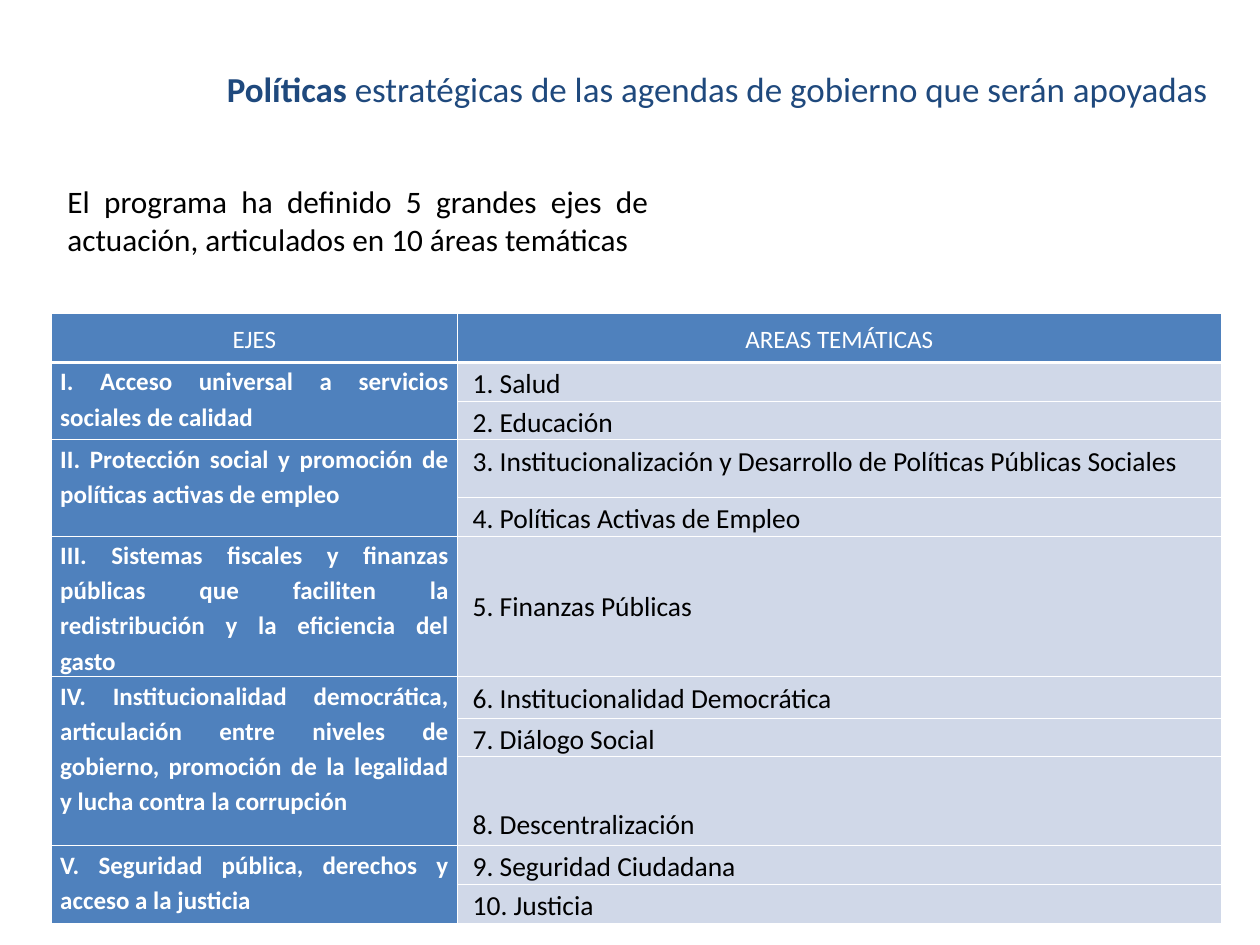
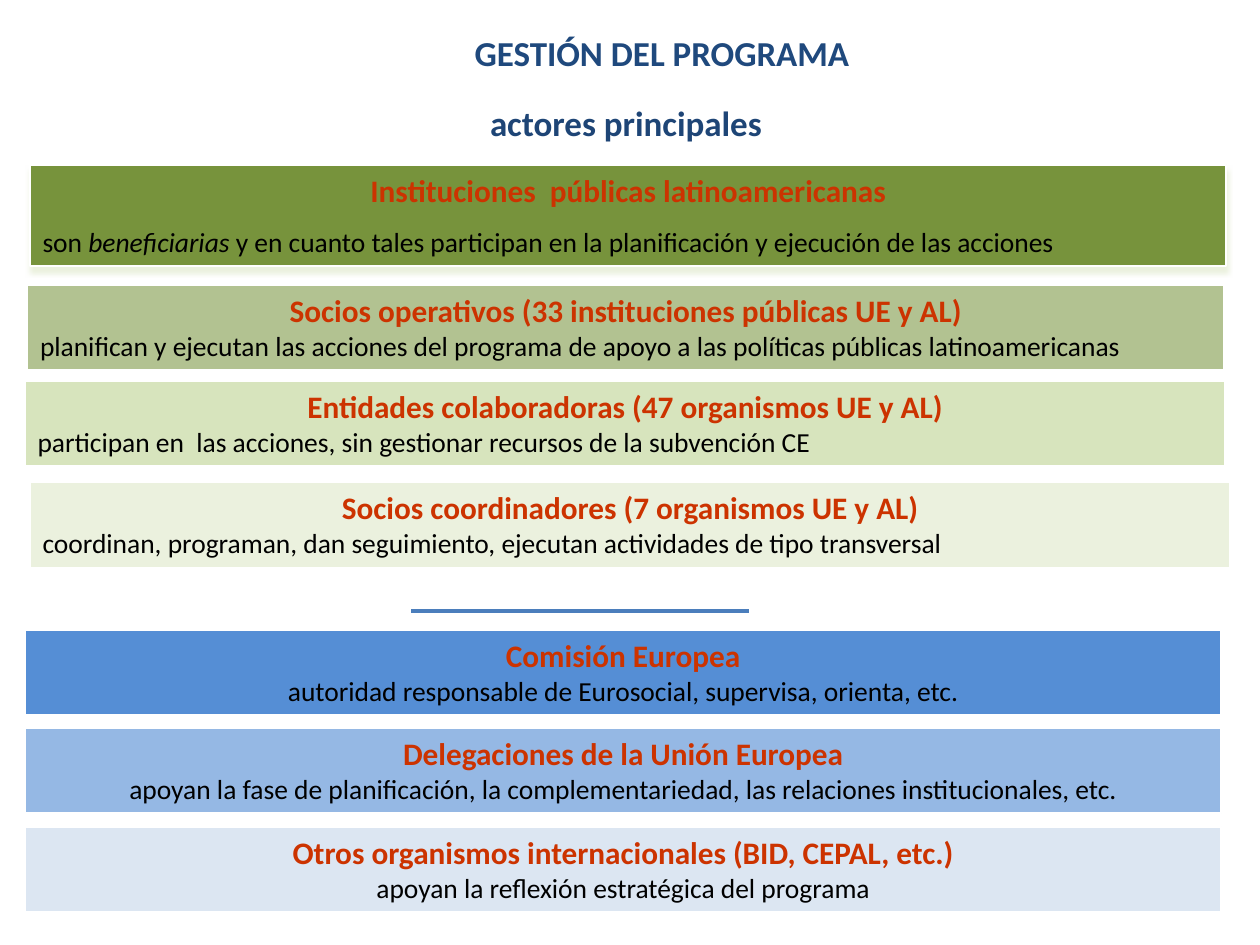
"""Builds two slides on the programme's policy areas and its main actors."""
from dataclasses import dataclass

from lxml.etree import SubElement
from pptx import Presentation
from pptx.dml.color import RGBColor
from pptx.enum.shapes import MSO_CONNECTOR, MSO_SHAPE
from pptx.enum.text import MSO_ANCHOR as Anchor, MSO_AUTO_SIZE as AutoSize, PP_ALIGN as Align
from pptx.oxml.ns import qn
from pptx.util import Pt

FONT = "Calibri"
COLORS = {
    "title": "1F497D", "subtitle": "1E4576", "heading": "CC3300", "black": "000000",
    "white": "FFFFFF", "axis": "4F81BD", "area": "D0D8E8", "divider": "4B7EBC",
    "olive": "77933C", "light_olive": "D7E4BD", "pale_olive": "EBF1DE",
    "blue": "558ED5", "pale_blue": "DCE6F2",
}
COLUMN_WIDTHS = (325, 611)
TITLE_SIZE, HEADING_SIZE, AXIS_SIZE, AREA_SIZE = 28, 25, 20, 22
ROW_GAP = 13


@dataclass(frozen=True)
class Frame:
    left: float
    top: float
    width: float
    height: float

    def lengths(self) -> tuple:
        return Pt(self.left), Pt(self.top), Pt(self.width), Pt(self.height)


@dataclass(frozen=True)
class Span:
    text: str
    bold: bool | None = None
    italic: bool | None = None


@dataclass(frozen=True)
class Area:
    text: str
    height: float
    anchor: Anchor = Anchor.TOP
    bottom: float = 0


@dataclass(frozen=True)
class Axis:
    text: str
    areas: tuple[Area, ...]


@dataclass(frozen=True)
class Actor:
    frame: Frame
    color: str
    heading: str
    role: tuple[Span, ...]
    align: Align = Align.LEFT
    opacity: int = 100
    role_gap: float = 0
    shadow: str = ""


AXES = (
    Axis("I. Acceso universal a servicios sociales de calidad",
         (Area("1. Salud", 31), Area("2. Educación", 31))),
    Axis("II. Protección social y promoción de políticas activas de empleo",
         (Area("3. Institucionalización y Desarrollo de Políticas Públicas Sociales", 46),
          Area("4. Políticas Activas de Empleo", 31))),
    Axis("III. Sistemas fiscales y finanzas públicas que faciliten la redistribución "
         "y la eficiencia del gasto",
         (Area("5. Finanzas Públicas", 110, Anchor.MIDDLE, 3),)),
    Axis("IV. Institucionalidad democrática, articulación entre niveles de gobierno, "
         "promoción de la legalidad y lucha contra la corrupción",
         (Area("6. Institucionalidad Democrática", 33), Area("7. Diálogo Social", 31),
          Area("8. Descentralización", 71, Anchor.BOTTOM, 3))),
    Axis("V. Seguridad pública, derechos y acceso a la justicia",
         (Area("9. Seguridad Ciudadana", 31), Area("10. Justicia", 31))),
)

ACTORS = (
    Actor(Frame(24, 132, 957, 81), "olive", "Instituciones  públicas latinoamericanas",
          (Span("son "), Span("beneficiarias", italic=True),
           Span(" y en cuanto tales participan en la planificación y ejecución de las acciones")),
          role_gap=ROW_GAP, shadow="pale_olive"),
    Actor(Frame(22, 228, 957, 68), "olive",
          "Socios operativos (33 instituciones públicas UE y AL)",
          (Span("planifican y ejecutan las acciones del programa de apoyo a las políticas "
                "públicas latinoamericanas"),), opacity=56),
    Actor(Frame(20, 305, 960, 68), "light_olive",
          "Entidades colaboradoras (47 organismos UE y AL)",
          (Span("participan en  las acciones, sin gestionar recursos de la subvención CE"),)),
    Actor(Frame(24, 386, 960, 68), "pale_olive",
          "Socios coordinadores (7 organismos UE y AL)",
          (Span("coordinan, programan, dan seguimiento, ejecutan actividades de tipo "
                "transversal"),)),
    Actor(Frame(20, 504, 957, 68), "blue", "Comisión Europea",
          (Span("autoridad responsable de Eurosocial, supervisa, orienta, etc."),),
          Align.CENTER),
    Actor(Frame(20, 582.5, 957, 68), "blue", "Delegaciones de la Unión Europea",
          (Span("apoyan la fase de planificación, la complementariedad, las relaciones "
                "institucionales, etc."),), Align.CENTER, opacity=62),
    Actor(Frame(20, 661.5, 957, 68), "pale_blue",
          "Otros organismos internacionales (BID, CEPAL, etc.)",
          (Span("apoyan la reflexión estratégica del programa"),), Align.CENTER),
)


def rgb(name: str) -> RGBColor:
    return RGBColor.from_string(COLORS[name])


def write(para, spans: tuple[Span, ...], size: float, color: str,
          align: Align = Align.LEFT, bold: bool = False) -> None:
    para.alignment = align
    font = para.font
    font.name, font.size, font.bold = FONT, Pt(size), bold
    font.color.rgb = rgb(color)
    for span in spans:
        run = para.add_run()
        run.text = span.text
        if span.bold is not None:
            run.font.bold = span.bold
        if span.italic is not None:
            run.font.italic = span.italic


def prepare(box, wrap: bool = True):
    text = box.text_frame
    text.word_wrap, text.auto_size = wrap, AutoSize.NONE
    text.vertical_anchor = Anchor.TOP
    text.margin_left = text.margin_right = Pt(10)
    text.margin_top = text.margin_bottom = Pt(5)
    return text


def add_page(deck, frame: Frame, spans: tuple[Span, ...]):
    page = deck.slides.add_slide(deck.slide_layouts[5])
    title = page.shapes.title
    title.left, title.top, title.width, title.height = frame.lengths()
    write(prepare(title).paragraphs[0], spans, TITLE_SIZE, "title", Align.CENTER)
    return page


def add_label(page, frame: Frame, text: str, size: float, color: str,
              align: Align, bold: bool = False, wrap: bool = True) -> None:
    box = page.shapes.add_textbox(*frame.lengths())
    write(prepare(box, wrap).paragraphs[0], (Span(text),), size, color, align, bold)


def add_borders(cell, bottom: float) -> None:
    properties = cell._tc.get_or_add_tcPr()
    for side, width in (("L", 1), ("R", 1), ("T", 1), ("B", bottom)):
        line = SubElement(properties, qn(f"a:ln{side}"), w=str(Pt(width)))
        fill = SubElement(line, qn("a:solidFill"))
        SubElement(fill, qn("a:srgbClr"), val=COLORS["white"])


def fill_cell(cell, color: str, bottom: float = 1) -> None:
    add_borders(cell, bottom)
    cell.fill.solid()
    cell.fill.fore_color.rgb = rgb(color)
    cell.margin_left = cell.margin_right = Pt(7.2)
    cell.margin_top = cell.margin_bottom = 0


def write_cell(cell, text: str, size: float, color: str, align: Align = Align.JUSTIFY,
               bold: bool = False, anchor: Anchor = Anchor.TOP) -> None:
    cell.vertical_anchor = anchor
    para = cell.text_frame.paragraphs[0]
    para.line_spacing, para.space_after = 1.15, Pt(6)
    write(para, (Span(text),), size, color, align, bold)


def add_axes_table(page) -> None:
    areas = [area for axis in AXES for area in axis.areas]
    heights = [39] + [area.height for area in areas]
    frame = Frame(41, 251, sum(COLUMN_WIDTHS), sum(heights))
    table = page.shapes.add_table(len(heights), 2, *frame.lengths()).table
    table.first_row = table.horz_banding = False
    for column, width in zip(table.columns, COLUMN_WIDTHS):
        column.width = Pt(width)
    for row, height in zip(table.rows, heights):
        row.height = Pt(height)
    for column, text in enumerate(("EJES", "AREAS TEMÁTICAS")):
        header = table.cell(0, column)
        fill_cell(header, "axis", bottom=3)
        write_cell(header, text, AXIS_SIZE, "white", Align.CENTER, anchor=Anchor.MIDDLE)
    for row, area in enumerate(areas, 1):
        fill_cell(table.cell(row, 0), "axis")
        cell = table.cell(row, 1)
        fill_cell(cell, "area")
        cell.margin_left, cell.margin_bottom = Pt(12.2), Pt(area.bottom)
        write_cell(cell, area.text, AREA_SIZE, "black", anchor=area.anchor)
    first = 1
    for axis in AXES:
        last = first + len(axis.areas) - 1
        cell = table.cell(first, 0)
        if last > first:
            cell.merge(table.cell(last, 0))
        write_cell(cell, axis.text, AXIS_SIZE, "white", bold=True)
        first = last + 1


def add_shadow(box, color: str) -> None:
    effects = box._element.spPr.find(qn("a:effectLst"))
    shadow = SubElement(effects, qn("a:outerShdw"), blurRad=str(Pt(4)), dist=str(Pt(4)),
                        dir="5400000", rotWithShape="0")
    SubElement(shadow, qn("a:srgbClr"), val=COLORS[color])


def add_actor(page, actor: Actor) -> None:
    box = page.shapes.add_shape(MSO_SHAPE.RECTANGLE, *actor.frame.lengths())
    box.shadow.inherit = False
    box.fill.solid()
    box.fill.fore_color.rgb = rgb(actor.color)
    if actor.opacity < 100:
        color = box._element.spPr.find(f"{qn('a:solidFill')}/{qn('a:srgbClr')}")
        SubElement(color, qn("a:alpha"), val=str(actor.opacity * 1000))
    box.line.color.rgb, box.line.width = rgb("white"), Pt(1.5)
    if actor.shadow:
        add_shadow(box, actor.shadow)
    text = prepare(box)
    write(text.paragraphs[0], (Span(actor.heading),), HEADING_SIZE, "heading",
          Align.CENTER, True)
    role = text.add_paragraph()
    role.space_before = Pt(actor.role_gap)
    write(role, actor.role, AREA_SIZE, "black", actor.align)


def add_divider(page) -> None:
    line = page.shapes.add_connector(MSO_CONNECTOR.STRAIGHT, Pt(329), Pt(489), Pt(599), Pt(489))
    line.line.color.rgb, line.line.width = rgb("divider"), Pt(3)
    SubElement(line._element.spPr, qn("a:effectLst"))


def build_policies(deck) -> None:
    page = add_page(deck, Frame(164, 49, 819, 44), (
        Span("Políticas ", bold=True),
        Span("estratégicas de las agendas de gobierno que serán apoyadas")))
    add_label(page, Frame(44, 141, 484.5, 71),
              "El programa ha definido 5 grandes ejes de actuación, articulados en "
              "10 áreas temáticas", HEADING_SIZE, "black", Align.JUSTIFY)
    add_axes_table(page)


def build_management(deck) -> None:
    page = add_page(deck, Frame(130, 20, 799, 71), (Span("GESTIÓN DEL PROGRAMA", bold=True),))
    for actor in ACTORS:
        add_actor(page, actor)
    add_divider(page)
    add_label(page, Frame(382, 76, 240, 44), "actores principales", TITLE_SIZE,
              "subtitle", Align.LEFT, bold=True, wrap=False)


def main() -> None:
    deck = Presentation()
    deck.slide_width, deck.slide_height = Pt(1008), Pt(756)
    build_policies(deck)
    build_management(deck)
    deck.save("out.pptx")


if __name__ == "__main__":
    main()
